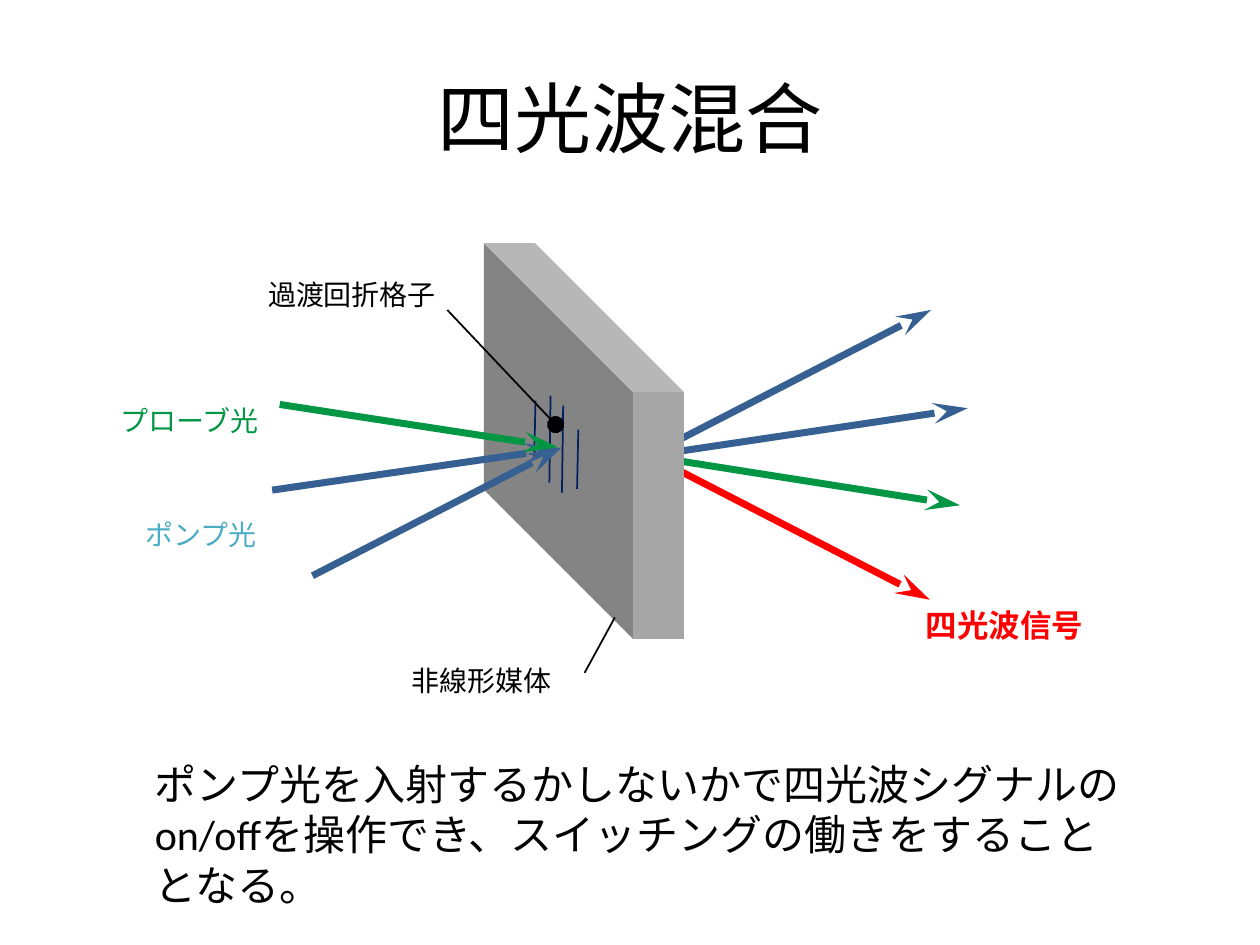
"""Build a slide explaining four-wave mixing in a nonlinear medium."""
from lxml.etree import SubElement
from pptx import Presentation
from pptx.dml.color import RGBColor
from pptx.enum.shapes import MSO_CONNECTOR, MSO_SHAPE
from pptx.enum.text import MSO_ANCHOR, MSO_AUTO_SIZE, PP_ALIGN
from pptx.oxml.ns import qn
from pptx.util import Inches, Pt

BLACK = RGBColor(0x00, 0x00, 0x00)
GREEN = RGBColor(0x00, 0x96, 0x44)
BLUE = RGBColor(0x37, 0x60, 0x92)
AQUA = RGBColor(0x4B, 0xAC, 0xC6)
NAVY = RGBColor(0x00, 0x20, 0x60)
RED = RGBColor(0xFF, 0x00, 0x00)
GRAY = RGBColor(0xA6, 0xA6, 0xA6)

TITLE = "四光波混合"
SUMMARY = ("ポンプ光を入射するかしないかで四光波シグナルのon/offを操作でき、"
           "スイッチングの働きをすることとなる。")
OUTGOING = [
    ((5.4, 3.66), (7.62, 4.01), GREEN),
    ((5.4, 3.58), (7.68, 3.24), BLUE),
    ((5.41, 3.48), (7.39, 2.46), BLUE),
    ((5.4, 3.74), (7.38, 4.76), RED),
]
INCOMING = [
    ((2.48, 4.57), (4.46, 3.55), BLUE),
    ((2.16, 3.89), (4.44, 3.56), BLUE),
    ((2.22, 3.21), (4.43, 3.55), GREEN),
]
GRATING = [(4.47, 3.22, 0.69), (4.37, 3.14, 0.69), (4.59, 3.41, 0.47), (4.25, 3.18, 0.47)]
LABELS = [
    ("プローブ光", (0.86, 3.15, 1.91, 0.37), {"size": Pt(16)}, GREEN),
    ("ポンプ光", (1.06, 4.06, 2.01, 0.37), {"size": Pt(16)}, AQUA),
    ("非線形媒体", (3.17, 5.22, 4.73, 0.37), {"size": Pt(16)}, BLACK),
    ("過渡回折格子", (2.03, 2.15, 3.23, 0.37), {"size": Pt(16)}, BLACK),
    ("四光波信号", (7.25, 4.76, 1.93, 0.4), {"size": Pt(18), "bold": True}, RED),
]


def write(frame, text, formats, color):
    span = frame.paragraphs[0].add_run()
    span.text = text
    for name, value in {"name": "Calibri", **formats}.items():
        setattr(span.font, name, value)
    span.font.color.rgb = color


def add_label(shapes, text, place, formats, color):
    box = shapes.add_textbox(*map(Inches, place))
    box.text_frame.word_wrap = True
    box.text_frame.auto_size = MSO_AUTO_SIZE.SHAPE_TO_FIT_TEXT
    write(box.text_frame, text, formats, color)


def add_line(shapes, start, end, color, width=1, **ends):
    line = shapes.add_connector(MSO_CONNECTOR.STRAIGHT, *map(Inches, (*start, *end)))
    line.line.color.rgb = color
    line.line.width = Pt(width)
    outline = line.line._get_or_add_ln()
    for tag, (kind, breadth) in ends.items():
        SubElement(outline, qn(f"a:{tag}"), type=kind, w=breadth, len="lg")
    SubElement(line._element.spPr, qn("a:effectLst"))


def add_beams(shapes, beams):
    for start, end, color in beams:
        add_line(shapes, start, end, color, 4, tailEnd=("stealth", "med"))


def add_medium(shapes):
    medium = shapes.add_shape(MSO_SHAPE.CUBE, *map(Inches, (3.84, 1.93, 1.59, 3.14)))
    medium.adjustments[0] = 0.744
    medium.shadow.inherit = False
    medium.fill.solid()
    medium.fill.fore_color.rgb = GRAY
    medium.line.fill.background()
    medium._element.spPr.get_or_add_xfrm().set("flipH", "1")


def main():
    deck = Presentation()
    deck.slide_width, deck.slide_height = Inches(10), Inches(7.5)
    page = deck.slides.add_slide(deck.slide_layouts[5])

    title = page.shapes.title
    title.left, title.top, title.width, title.height = map(Inches, (0.5, 0.3, 9, 1.25))
    title.text_frame.vertical_anchor = MSO_ANCHOR.MIDDLE
    title.text_frame.paragraphs[0].alignment = PP_ALIGN.CENTER
    write(title.text_frame, TITLE, {"size": Pt(44)}, BLACK)

    diagram = page.shapes.add_group_shape().shapes
    add_beams(diagram, OUTGOING)
    add_medium(diagram)
    for left, top, height in GRATING:
        add_line(diagram, (left, top), (left - 0.01, top + height), NAVY)
    add_beams(diagram, INCOMING)
    add_line(diagram, (4.88, 4.9), (4.64, 5.34), BLACK)
    add_line(diagram, (4.41, 3.37), (3.55, 2.46), BLACK, headEnd=("oval", "lg"))
    for label in LABELS:
        add_label(diagram, *label)

    add_label(page.shapes, SUMMARY, (1.13, 5.97, 7.89, 0.91), {"size": Pt(24)}, BLACK)
    deck.save("out.pptx")


if __name__ == "__main__":
    main()
